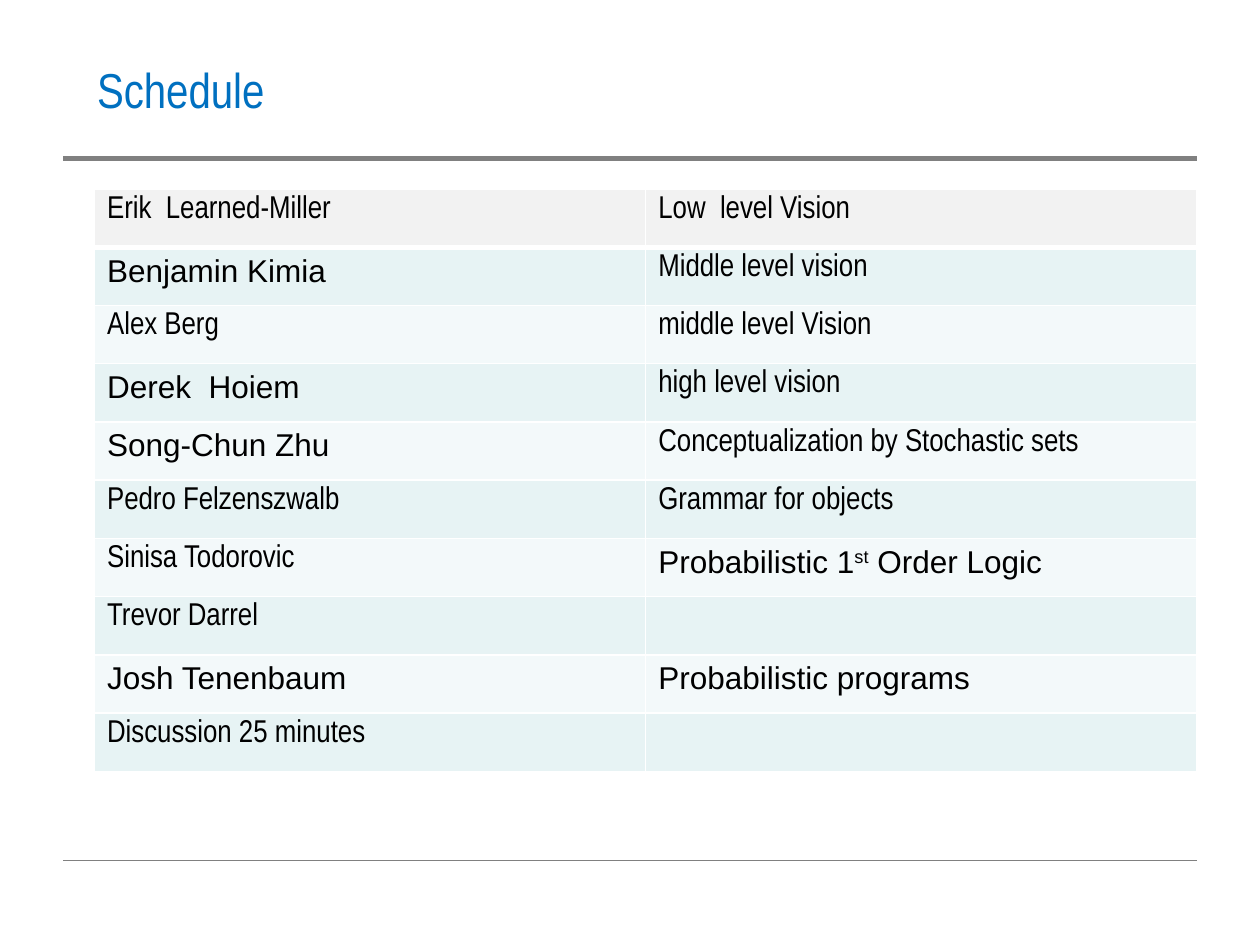
from lxml import etree
from pptx import Presentation
from pptx import util as u
from pptx.dml.color import RGBColor
from pptx.enum import shapes, text
from pptx.oxml.ns import qn

Pt = u.Pt
COLORS = {"title": "0070C0", "rule": "808080", "text": "000000", "header": "F2F2F2",
          "band": "E7F3F4", "light": "F3F9FA", "border": "FFFFFF"}
NARROW, WIDE = "Arial Narrow", "Arial"


def rgb(name):
    return RGBColor.from_string(COLORS[name])


def add_border(cell, side, width):
    border = etree.SubElement(cell._tc.get_or_add_tcPr(), qn(f"a:{side}"), w=str(Pt(width)))
    fill = etree.SubElement(border, qn("a:solidFill"))
    etree.SubElement(fill, qn("a:srgbClr"), val=COLORS["border"])


deck = Presentation()
deck.slide_width, deck.slide_height = Pt(720), Pt(540)
slide = deck.slides.add_slide(deck.slide_layouts[5])

for y, weight in ((90.72, 3), (491.76, 0.75)):
    rule = slide.shapes.add_connector(shapes.MSO_CONNECTOR.STRAIGHT, Pt(36), Pt(y), Pt(684), Pt(y))
    rule.line.color.rgb = rgb("rule")
    rule.line.width = Pt(weight)
    etree.SubElement(rule._element.spPr, qn("a:effectLst"))

title = slide.shapes.title
title.left, title.top, title.width, title.height = Pt(48.24), Pt(30.24), Pt(110.88), Pt(41.04)
title.text_frame.text = "Schedule"
title.text_frame.word_wrap = False
title.text_frame.auto_size = text.MSO_AUTO_SIZE.SHAPE_TO_FIT_TEXT
heading = title.text_frame.paragraphs[0]
heading.alignment = text.PP_ALIGN.LEFT
heading.font.name, heading.font.size = NARROW, Pt(28)
heading.font.color.rgb = rgb("title")

schedule = [
    (("Erik  Learned-Miller", NARROW), ("Low  level Vision", NARROW)),
    (("Benjamin Kimia", WIDE), ("Middle level vision", NARROW)),
    (("Alex Berg", NARROW), ("middle level Vision", NARROW)),
    (("Derek  Hoiem", WIDE), ("high level vision", NARROW)),
    (("Song-Chun Zhu", WIDE), ("Conceptualization by Stochastic sets", NARROW)),
    (("Pedro Felzenszwalb", NARROW), ("Grammar for objects", NARROW)),
    (("Sinisa Todorovic", NARROW), ("Probabilistic 1^st^ Order Logic", WIDE)),
    (("Trevor Darrel", NARROW), ("", NARROW)),
    (("Josh Tenenbaum", WIDE), ("Probabilistic programs", WIDE)),
    (("Discussion 25 minutes", NARROW), ("", NARROW)),
]
sessions = slide.shapes.add_table(len(schedule), 2, Pt(54), Pt(108), Pt(630), Pt(333)).table
sessions.horz_banding = False
sessions.first_row = False
for row in sessions.rows:
    row.height = Pt(33.3)

for r, entries in enumerate(schedule):
    shade = "header" if r == 0 else "band" if r % 2 else "light"
    for c, (words, face) in enumerate(entries):
        cell = sessions.cell(r, c)
        for side in ("lnL", "lnR", "lnT", "lnB"):
            heavy = (r == 0 and side == "lnB") or (r == 1 and side == "lnT")
            add_border(cell, side, 3 if heavy else 1)
        cell.fill.solid()
        cell.fill.fore_color.rgb = rgb(shade)
        line = cell.text_frame.paragraphs[0]
        line.font.name, line.font.size, line.font.bold = face, Pt(18), False
        line.font.color.rgb = rgb("text")
        for i, part in enumerate(words.split("^") if words else []):
            run = line.add_run()
            run.text = part
            if i % 2:
                run._r.get_or_add_rPr().set("baseline", "30000")

deck.save("out.pptx")
